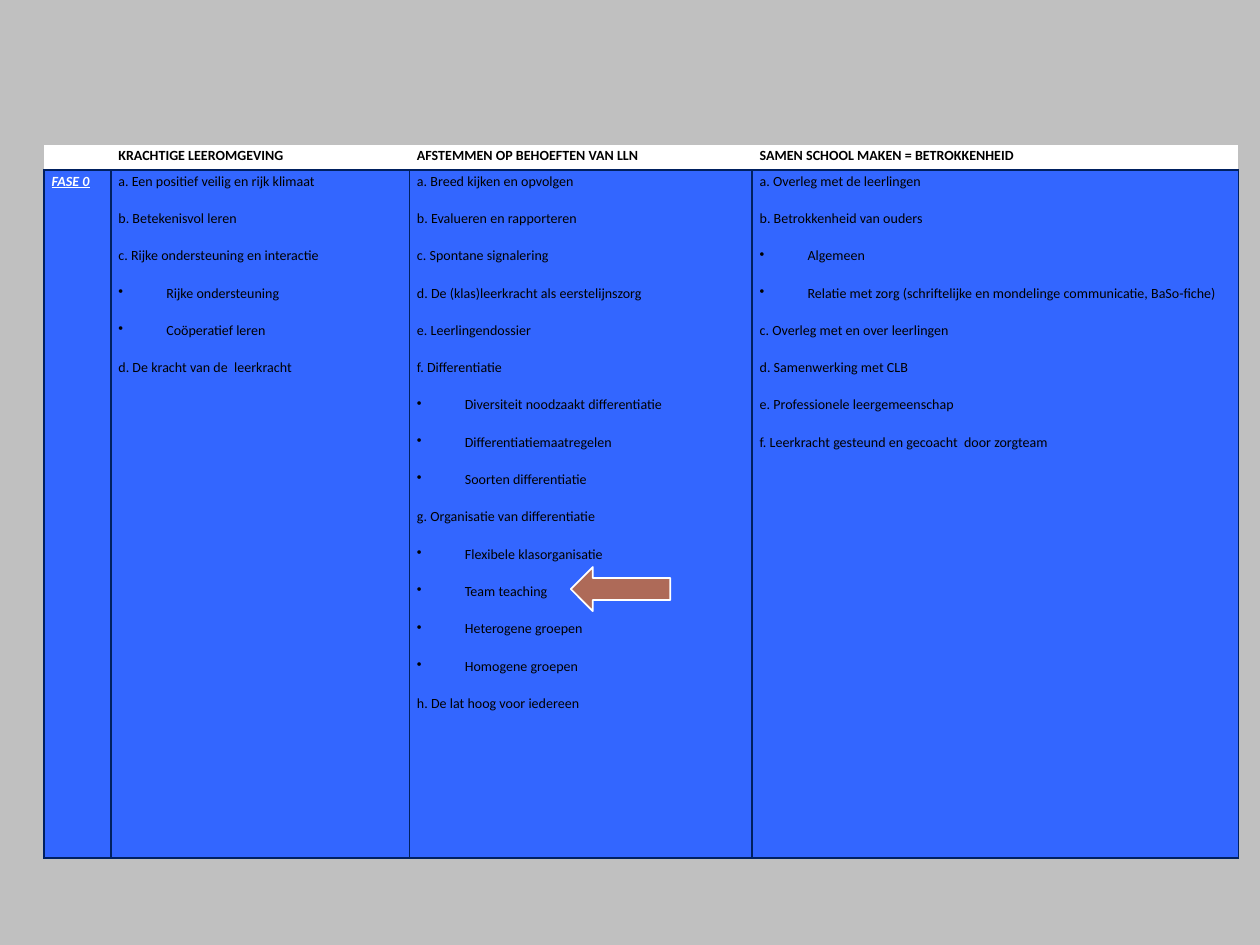
"""Build a slide with a table of phase 0 care measures and an arrow at team teaching."""
from lxml import etree
from pptx import Presentation
from pptx.dml.color import RGBColor
from pptx.enum.shapes import MSO_SHAPE
from pptx.oxml.ns import qn
from pptx.util import Inches, Pt

LEFT_ARROW = MSO_SHAPE.LEFT_ARROW
GREY = RGBColor(0xC0, 0xC0, 0xC0)
WHITE = RGBColor(0xFF, 0xFF, 0xFF)
BLACK = RGBColor(0, 0, 0)
BLUE = RGBColor(0x33, 0x66, 0xFF)
NAVY = RGBColor(0x00, 0x20, 0x60)
BROWN = RGBColor(0xAE, 0x6A, 0x58)

BULLET = "•"
HEADERS = [
    "",
    "KRACHTIGE LEEROMGEVING",
    "AFSTEMMEN OP BEHOEFTEN VAN LLN",
    "SAMEN SCHOOL MAKEN = BETROKKENHEID",
]
MEASURES = [
    ["FASE 0"],
    [
        "a. Een positief veilig en rijk klimaat",
        "b. Betekenisvol leren",
        "c. Rijke ondersteuning en interactie",
        "•Rijke ondersteuning",
        "•Coöperatief leren",
        "d. De kracht van de  leerkracht",
    ],
    [
        "a. Breed kijken en opvolgen",
        "b. Evalueren en rapporteren",
        "c. Spontane signalering",
        "d. De (klas)leerkracht als eerstelijnszorg",
        "e. Leerlingendossier",
        "f. Differentiatie",
        "•Diversiteit noodzaakt differentiatie",
        "•Differentiatiemaatregelen",
        "•Soorten differentiatie",
        "g. Organisatie van differentiatie",
        "•Flexibele klasorganisatie",
        "•Team teaching",
        "•Heterogene groepen",
        "•Homogene groepen",
        "h. De lat hoog voor iedereen",
    ],
    [
        "a. Overleg met de leerlingen",
        "b. Betrokkenheid van ouders",
        "•Algemeen",
        "•Relatie met zorg (schriftelijke en mondelinge communicatie, BaSo-fiche)",
        "c. Overleg met en over leerlingen",
        "d. Samenwerking met CLB",
        "e. Professionele leergemeenschap",
        "f. Leerkracht gesteund en gecoacht  door zorgteam",
    ],
]
COLUMN_WIDTHS = [0.53, 2.37, 2.72, 3.86]
ROW_HEIGHTS = [0.2, 5.46]
TABLE_LEFT, TABLE_TOP = 0.35, 1.15
ARROW_BOX = (4.53, 4.5, 0.79, 0.35)
INDENT = Inches(0.38)

BODY = {"name": "Calibri", "size": Pt(8), "bold": False}
HEADING = {**BODY, "bold": True}
PHASE = {**HEADING, "italic": True, "underline": True}
CELL_MARGINS = {
    "margin_left": Inches(0.06),
    "margin_right": Inches(0.06),
    "margin_top": 0,
    "margin_bottom": 0,
}


def apply_format(target, values):
    for name, value in values.items():
        setattr(target, name, value)


def set_borders(cell, sides):
    properties = cell._tc.get_or_add_tcPr()
    for position, side in enumerate("LRTB"):
        line = etree.Element(qn(f"a:ln{side}"), w=str(Pt(1)))
        if side in sides:
            fill = etree.SubElement(line, qn("a:solidFill"))
            etree.SubElement(fill, qn("a:srgbClr"), val=str(NAVY))
        else:
            etree.SubElement(line, qn("a:noFill"))
        properties.insert(position, line)


def write_paragraph(para, text, font_values, colour):
    para.line_spacing = 1.15
    para.space_after = Pt(10)
    if text.startswith(BULLET):
        properties = para._p.get_or_add_pPr()
        properties.set("marL", str(INDENT))
        properties.set("indent", str(-INDENT))
        etree.SubElement(properties, qn("a:buChar"), char=BULLET)
    if text:
        span = para.add_run()
        span.text = text.removeprefix(BULLET)
        apply_format(span.font, font_values)
        span.font.color.rgb = colour
    else:
        size = int(font_values["size"].pt * 100)
        etree.SubElement(para._p, qn("a:endParaRPr"), sz=str(size))


def fill_cell(cell, lines, font_values, colour, background, sides):
    apply_format(cell, CELL_MARGINS)
    cell.fill.solid()
    cell.fill.fore_color.rgb = background
    set_borders(cell, sides)
    frame = cell.text_frame
    for index, text in enumerate(lines):
        para = frame.add_paragraph() if index else frame.paragraphs[0]
        write_paragraph(para, text, font_values, colour)


def add_measures_table(page):
    frame = page.shapes.add_table(
        len(ROW_HEIGHTS), len(COLUMN_WIDTHS),
        Inches(TABLE_LEFT), Inches(TABLE_TOP),
        Inches(sum(COLUMN_WIDTHS)), Inches(sum(ROW_HEIGHTS)),
    )
    table = frame.table
    table.first_row = table.horz_banding = False
    for row, height in zip(table.rows, ROW_HEIGHTS):
        row.height = Inches(height)
    for index, width in enumerate(COLUMN_WIDTHS):
        table.columns[index].width = Inches(width)
        fill_cell(table.cell(0, index), [HEADERS[index]], HEADING, BLACK, WHITE, "B")
        font_values, colour = (BODY, BLACK) if index else (PHASE, WHITE)
        fill_cell(table.cell(1, index), MEASURES[index], font_values, colour, BLUE, "LRTB")


def add_arrow(page):
    arrow = page.shapes.add_shape(LEFT_ARROW, *map(Inches, ARROW_BOX))
    arrow.shadow.inherit = False
    arrow.fill.solid()
    arrow.fill.fore_color.rgb = BROWN
    arrow.line.color.rgb = WHITE
    arrow.line.width = Pt(1)


def main():
    deck = Presentation()
    deck.slide_width, deck.slide_height = Inches(10), Inches(7.5)
    page = deck.slides.add_slide(deck.slide_layouts[6])
    page.background.fill.solid()
    page.background.fill.fore_color.rgb = GREY
    add_measures_table(page)
    add_arrow(page)
    deck.save("out.pptx")


if __name__ == "__main__":
    main()
